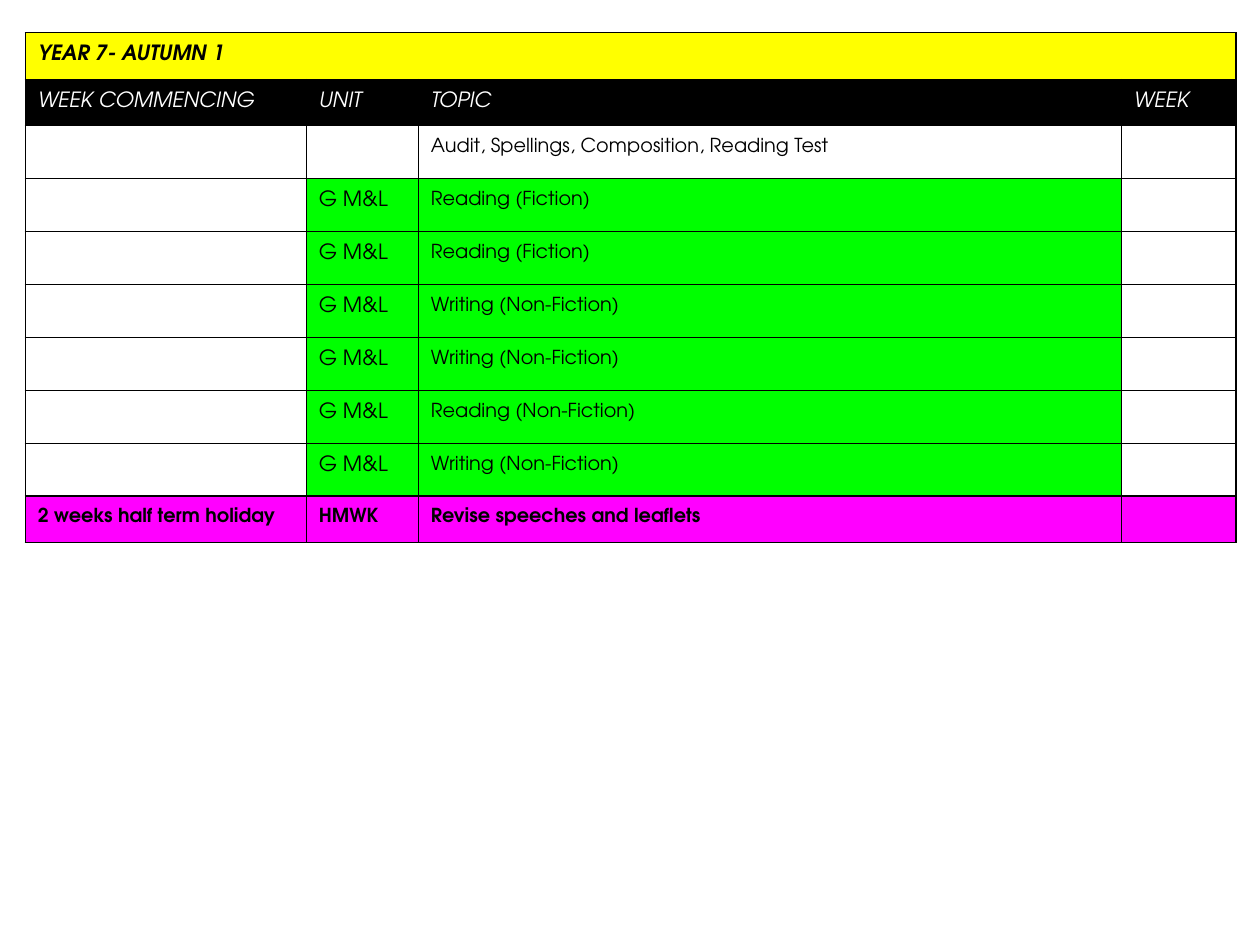
from dataclasses import dataclass

from lxml.etree import SubElement
from pptx import Presentation
from pptx.dml.color import RGBColor
from pptx.oxml.ns import qn
from pptx.util import Inches, Pt

FONT = "TeX Gyre Adventor"
BLACK, WHITE, YELLOW = "000000", "FFFFFF", "FFFF00"
GREEN, MAGENTA = "00FF00", "FF00FF"
COLS = (2.23, 0.89, 5.58, 0.91)
BAND_H, WEEK_H = 0.37, 0.42
BORDER_PT = 0.75
INSET = 0.1


@dataclass
class Cell:
    text: str = ""
    fill: str | None = None
    size: int = 12
    color: str = BLACK
    bold: bool = False
    italic: bool = False


@dataclass
class Row:
    cells: list[Cell]
    height: float = BAND_H


def rgb(value: str) -> RGBColor:
    return RGBColor.from_string(value)


def week(topic: str, unit: str = "", fill: str | None = None) -> Row:
    return Row([Cell(), Cell(unit, fill), Cell(topic, fill, 11), Cell()], WEEK_H)


def add_borders(cell) -> None:
    tc_pr = cell._tc.get_or_add_tcPr()
    for i, side in enumerate(("lnL", "lnR", "lnT", "lnB")):
        ln = tc_pr.makeelement(qn(f"a:{side}"), {"w": str(Pt(BORDER_PT))})
        fill = SubElement(ln, qn("a:solidFill"))
        SubElement(fill, qn("a:srgbClr"), {"val": BLACK})
        tc_pr.insert(i, ln)


def draw_cell(cell, data: Cell) -> None:
    if data.fill:
        cell.fill.solid()
        cell.fill.fore_color.rgb = rgb(data.fill)
    else:
        cell.fill.background()
    add_borders(cell)
    # Empty cells get no inset, so they never stretch their row
    inset = Inches(INSET if data.text else 0)
    for side in ("left", "top", "right", "bottom"):
        setattr(cell, f"margin_{side}", inset)
    if not data.text:
        return
    r = cell.text_frame.paragraphs[0].add_run()
    r.text = data.text
    formats = {"name": FONT, "size": Pt(data.size),
               "bold": data.bold, "italic": data.italic}
    for name, value in formats.items():
        setattr(r.font, name, value)
    r.font.color.rgb = rgb(data.color)


def draw_table(s, rows: list[Row], left: float, top: float) -> None:
    height = sum(row.height for row in rows)
    table = s.shapes.add_table(len(rows), len(COLS), Inches(left), Inches(top),
                               Inches(sum(COLS)), Inches(height)).table
    table.first_row = table.horz_banding = False
    for col, width in zip(table.columns, COLS):
        col.width = Inches(width)
    for i, row in enumerate(rows):
        table.rows[i].height = Inches(row.height)
        for j, data in enumerate(row.cells):
            draw_cell(table.cell(i, j), data)
    # The term title runs across the whole table
    table.cell(0, 0).merge(table.cell(0, len(COLS) - 1))


# Term title and column headings
title = [Cell("YEAR 7- AUTUMN 1", YELLOW, bold=True, italic=True)]
title += [Cell(fill=YELLOW) for _ in COLS[1:]]
headings = [Cell(text, BLACK, color=WHITE, italic=True)
            for text in ("WEEK COMMENCING", "UNIT", "TOPIC", "WEEK")]

# Weekly topics
topics = ("Reading (Fiction)", "Reading (Fiction)",
          "Writing (Non-Fiction)", "Writing (Non-Fiction)",
          "Reading (Non-Fiction)", "Writing (Non-Fiction)")
weeks = [week("Audit, Spellings, Composition, Reading Test")]
weeks += [week(topic, "G M&L", GREEN) for topic in topics]

# Holiday row
holiday = [Cell(text, MAGENTA, 11, bold=True)
           for text in ("2 weeks half term holiday", "HMWK",
                        "Revise speeches and leaflets", "")]

prs = Presentation()
prs.slide_width, prs.slide_height = Inches(10), Inches(7.5)
s = prs.slides.add_slide(prs.slide_layouts[6])
draw_table(s, [Row(title), Row(headings), *weeks, Row(holiday)], 0.2, 0.26)
prs.save("out.pptx")
